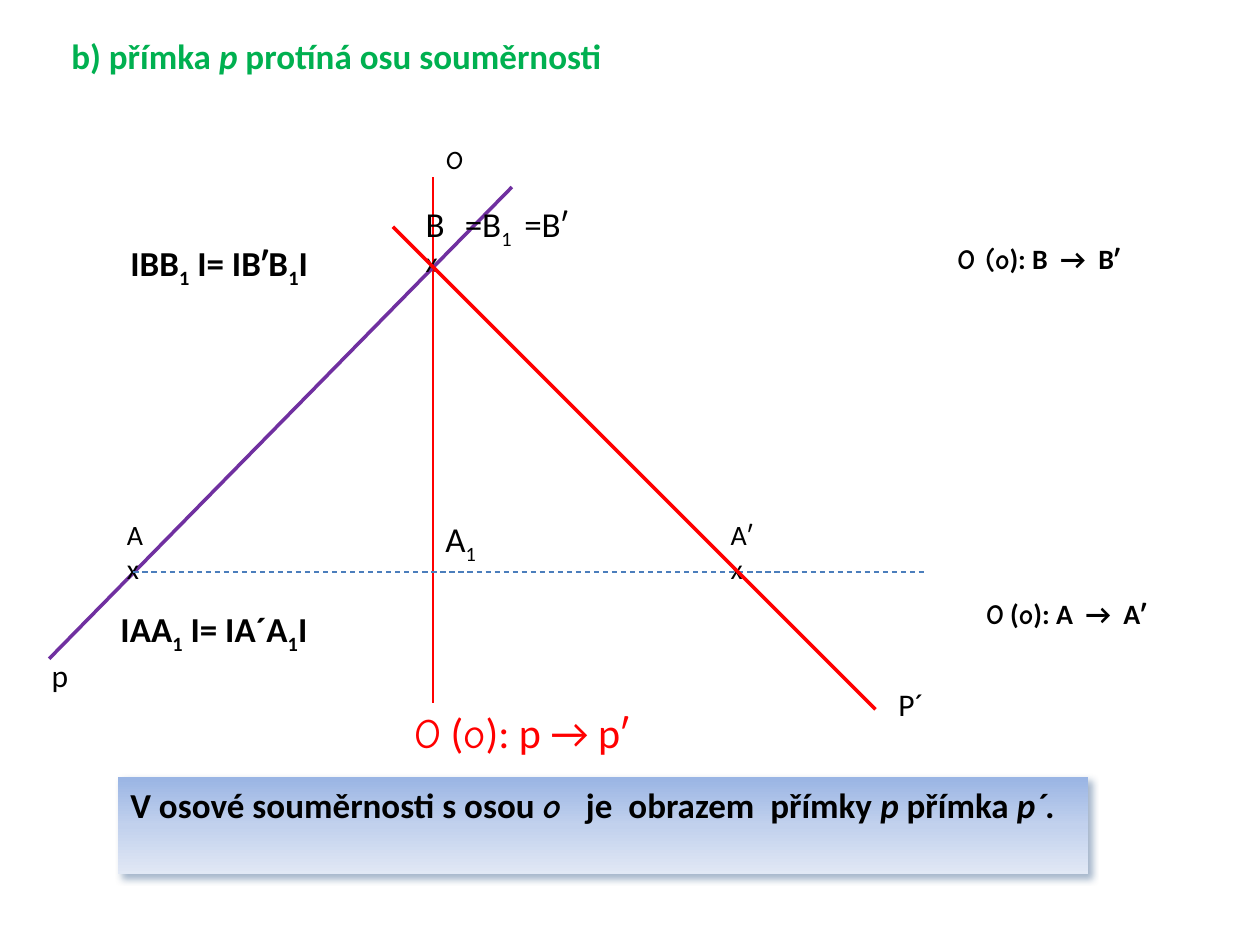
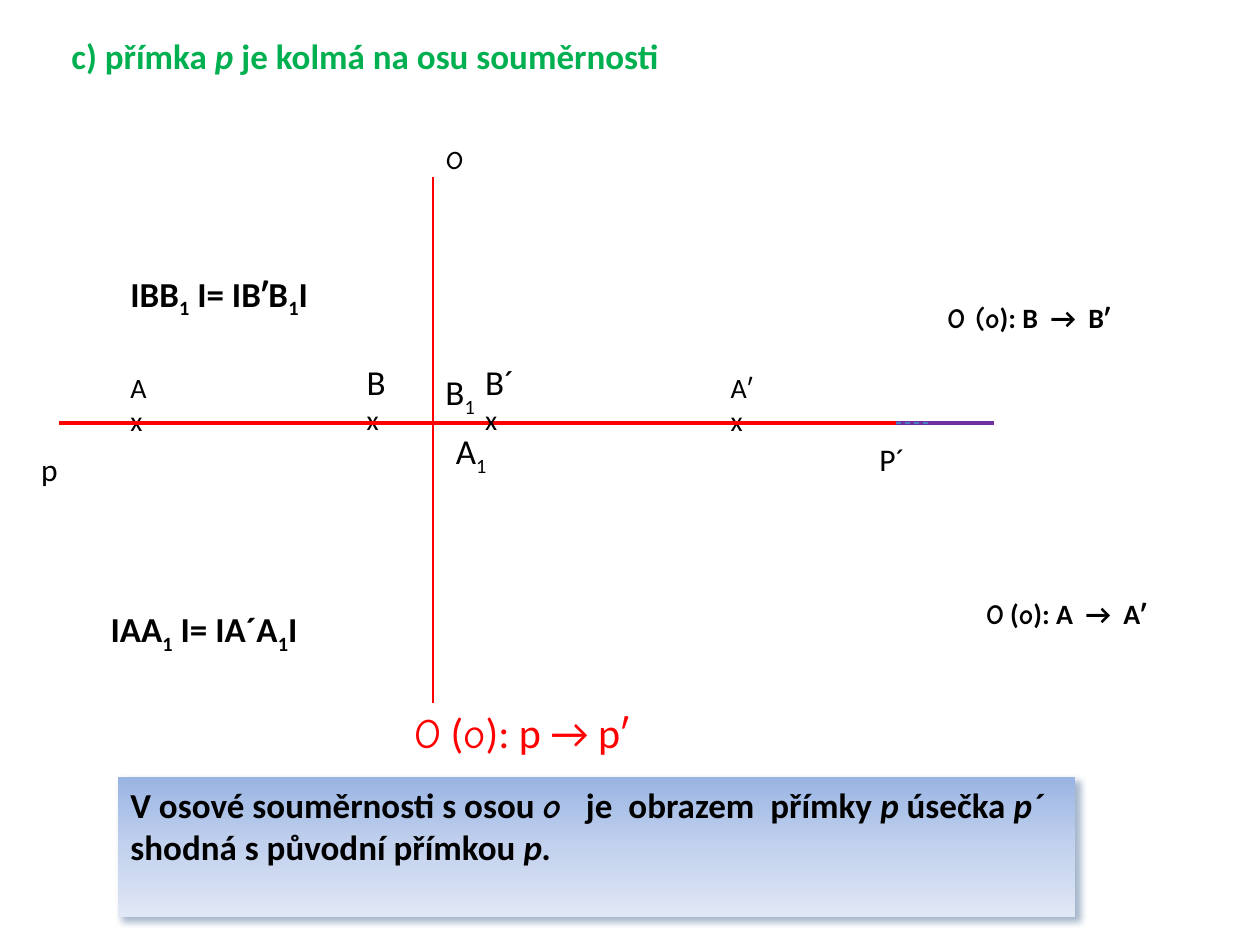
"""Two slides on the axial symmetry of a straight line."""
from copy import deepcopy
from dataclasses import dataclass

from pptx import Presentation
from pptx.dml.color import RGBColor as Rgb
from pptx.enum.dml import MSO_LINE_DASH_STYLE as Dash
from pptx.enum.shapes import MSO_CONNECTOR as Connector, MSO_SHAPE as Shape
from pptx.enum.text import MSO_ANCHOR as Anchor, MSO_AUTO_SIZE as AutoSize, PP_ALIGN as Align
from pptx.oxml.ns import qn
from pptx.oxml.xmlchemy import OxmlElement
from pptx.util import Cm, Pt


@dataclass(frozen=True)
class Theme:
    """Colours, fonts, type sizes and line widths of the lesson."""
    ink: str = "000000"
    heading: str = "00B050"
    axis: str = "FF0000"
    preimage: str = "7030A0"
    guide: str = "4B7EBC"
    shadow: str = "1F497D"
    banner: tuple = ((0, "9AB5E4"), (0.5, "C2D1ED"), (1, "E1E8F5"))
    body_font: str = "Calibri"
    script_font: str = "Comic Neue"
    small: int = 16
    name: int = 18
    body: int = 20
    large: int = 24
    thin: float = 0.75
    thick: float = 2


class Sketch:
    """Draws the elements of a construction on the current slide."""

    def __init__(self, theme):
        """Open an empty deck."""
        self.theme = theme
        self.deck = Presentation()
        self.deck.slide_width, self.deck.slide_height = Cm(25.4), Cm(19.05)
        self.slide = None

    def new_slide(self):
        """Start the next blank slide."""
        self.slide = self.deck.slides.add_slide(self.deck.slide_layouts[6])

    def line(self, start, end, colour, width, dash=None):
        """Draw a straight line between two points."""
        stroke = self.slide.shapes.add_connector(
            Connector.STRAIGHT, *map(Cm, (*start, *end)))
        stroke.line.color.rgb = Rgb.from_string(colour)
        stroke.line.width = Pt(width)
        if dash:
            stroke.line.dash_style = dash
        stroke._element.spPr.append(OxmlElement("a:effectLst"))

    def add_runs(self, paragraph, runs, size, colour=None, bold=False):
        """Add runs, each plain or (text, flags): c script, i italic, s subscript."""
        paragraph.alignment = Align.LEFT
        for entry in runs:
            text, flags = (entry, "") if isinstance(entry, str) else entry
            run = paragraph.add_run()
            run.text = text
            font = run.font
            font.name = self.theme.script_font if "c" in flags else self.theme.body_font
            font.size, font.bold, font.italic = Pt(size), bold, "i" in flags
            font.color.rgb = Rgb.from_string(colour or self.theme.ink)
            if "s" in flags:
                font._element.set("baseline", "-25000")

    def label(self, place, runs, size=None, colour=None, bold=False, wrap=False):
        """Place one line of text and return its frame."""
        frame = self.slide.shapes.add_textbox(*map(Cm, place)).text_frame
        frame.word_wrap = wrap
        frame.auto_size = AutoSize.SHAPE_TO_FIT_TEXT
        self.add_runs(frame.paragraphs[0], runs, size or self.theme.body, colour, bold)
        return frame

    def point(self, left, top, name, width, size):
        """Name a point and put its cross below the name."""
        height = 1.63 if size == self.theme.small else 1.8
        frame = self.label((left, top, width, height), [name], size)
        self.add_runs(frame.add_paragraph(), ["x"], self.theme.small)

    def banner(self, width, height, lines):
        """Draw the shaded band with the conclusion."""
        band = self.slide.shapes.add_shape(
            Shape.RECTANGLE, *map(Cm, (2.38, 15.67, width, height)))
        band.line.fill.background()
        band.fill.gradient()
        band.fill.gradient_angle = 270
        properties = band._element.spPr
        stops = properties.find(".//" + qn("a:gsLst"))
        stops.insert(1, deepcopy(stops[0]))
        for stop, (position, colour) in zip(band.fill.gradient_stops, self.theme.banner):
            stop.position = position
            stop.color.rgb = Rgb.from_string(colour)
        band.shadow.inherit = False
        shadow = OxmlElement("a:outerShdw")
        for key, value in (("blurRad", Pt(4)), ("dist", Pt(3)), ("dir", 45 * 60000),
                           ("algn", "tl"), ("rotWithShape", 0)):
            shadow.set(key, str(value))
        tint, alpha = OxmlElement("a:srgbClr"), OxmlElement("a:alpha")
        tint.set("val", self.theme.shadow)
        alpha.set("val", "40000")
        tint.append(alpha)
        shadow.append(tint)
        properties.find(qn("a:effectLst")).append(shadow)
        frame = band.text_frame
        frame.word_wrap = True
        frame.vertical_anchor = Anchor.TOP
        for index, runs in enumerate(lines):
            paragraph = frame.add_paragraph() if index else frame.paragraphs[0]
            self.add_runs(paragraph, runs, self.theme.body, bold=True)

    def lines(self, preimage, guide, image, under, over):
        """Draw axis, line p, guide and image, with points under and over them."""
        theme = self.theme
        self.line((8.73, 3.57), (8.73, 14.17), theme.axis, theme.thin)
        self.line(*preimage, theme.preimage, theme.thick)
        for mark in under:
            self.point(*mark)
        self.line(*guide, theme.guide, theme.thin, Dash.DASH)
        self.line(*image, theme.axis, theme.thick)
        for mark in over:
            self.point(*mark)

    def captions(self, title, title_width, b_rule, b_equal, a_equal, p_name, image_name):
        """Set the title, the rules, the equalities and the line names."""
        theme = self.theme
        self.label((1.19, 0.58, title_width, 1.12), title, colour=theme.heading, bold=True)
        self.label((8.73, 2.59, 0.99, 1.12), [("o", "c")])
        self.label((19.63, 11.91, 4.04, 0.94),
                   [("O", "c"), " (", ("o", "c"), "): A  →  Aʹ"], theme.small, bold=True)
        self.label((*b_rule, 4.24, 0.94), [("O (o", "c"), "): B  →  Bʹ"],
                   theme.small, bold=True)
        self.label((*b_equal, 4.22, 1.12),
                   ["IBB", ("1", "s"), " I= IBʹB", ("1", "s"), "I"], bold=True)
        self.label((*a_equal, 5.13, 1.12),
                   ["IAA", ("1", "s"), " I= IA´A", ("1", "s"), "I"], bold=True, wrap=True)
        self.label((8.1, 14.12, 5.23, 1.27),
                   [("O", "c"), " (", ("o", "c"), "): p → pʹ"], theme.large, theme.axis)
        self.label((*p_name, 1.6, 1.02), ["p"], theme.name, wrap=True)
        self.label((*image_name, 1.4, 1.02), ["P´"], theme.name, wrap=True)


def main():
    """Build both slides and save the deck."""
    theme = Theme()
    sketch = Sketch(theme)
    conclusion = ["V osové souměrnosti s osou ", ("o  ", "ci"), "je  obrazem  přímky "]

    sketch.new_slide()
    sketch.lines(
        preimage=((10.32, 3.77), (0.99, 13.28)),
        guide=((2.69, 11.53), (18.69, 11.53)),
        image=((7.92, 4.57), (17.65, 14.3)),
        under=[(2.31, 10.31, "A", 0.84, theme.small),
               (8.33, 3.96, "B", 0.89, theme.body),
               (14.48, 10.31, "Aʹ", 0.99, theme.small)],
        over=[])
    sketch.label((10.32, 3.96, 1.42, 1.12), ["=Bʹ"])
    sketch.label((9.12, 3.96, 1.5, 1.12), ["=B", ("1", "s")])
    sketch.label((8.73, 10.31, 1.17, 1.12), ["A", ("1", "s")])
    sketch.captions(["b) přímka ", ("p", "i"), " protíná osu souměrnosti"], 11.3,
                    b_rule=(19.05, 4.75), b_equal=(2.38, 4.75), a_equal=(2.18, 12.12),
                    p_name=(0.79, 13.11), image_name=(17.86, 13.69))
    sketch.banner(19.56, 1.96, [[*conclusion, ("p", "i"), " přímka ", ("p´.", "i")]])

    sketch.new_slide()
    level = 8.53
    sketch.lines(
        preimage=((20.04, level), (1.57, level)),
        guide=((2.77, level), (18.77, level)),
        image=((1.19, level), (18.06, level)),
        under=[(2.38, 7.34, "A", 0.84, theme.small),
               (7.14, 7.14, "B", 0.89, theme.body),
               (14.48, 7.34, "Aʹ", 0.99, theme.small)],
        over=[(9.53, 7.14, "B´", 1.12, theme.body)])
    sketch.label((8.73, 7.34, 1.14, 1.12), ["B", ("1", "s")])
    sketch.label((8.94, level, 1.17, 1.12), ["A", ("1", "s")])
    sketch.captions(["c) přímka ", ("p", "i"), " je kolmá na osu souměrnosti"], 12.45,
                    b_rule=(18.85, 5.94), b_equal=(2.38, 5.36), a_equal=(1.98, 12.12),
                    p_name=(0.58, 8.94), image_name=(17.48, 8.74))
    sketch.banner(19.3, 2.82, [[*conclusion, ("p ", "i"), "úsečka ", ("p´", "i")],
                               ["shodná s původní přímkou ", ("p.", "i")]])

    sketch.deck.save("out.pptx")


if __name__ == "__main__":
    main()
